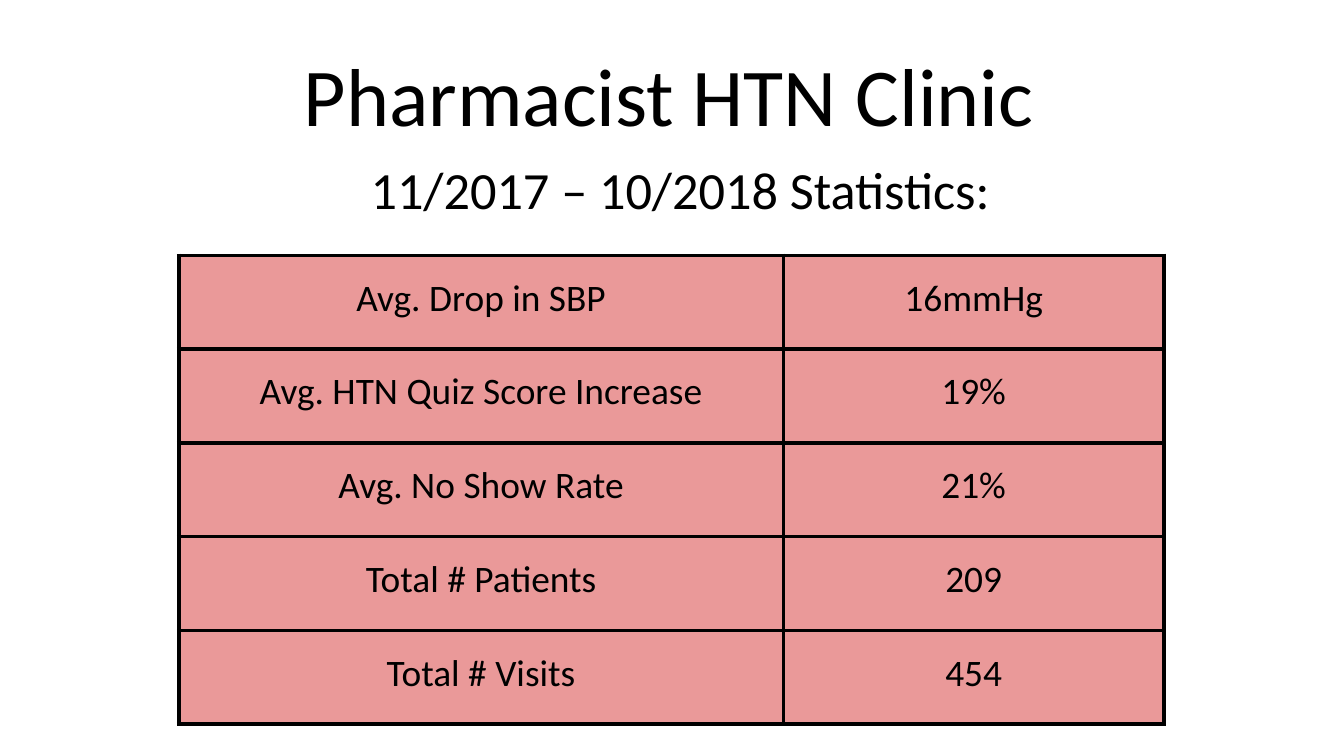
from lxml import etree
from pptx import Presentation
from pptx import util as u
from pptx.dml.color import RGBColor
from pptx.enum import text
from pptx.oxml.ns import qn

COLORS = {"ink": "000000", "cell": "EA9999", "paper": "FFFFFF"}
FONT = "Calibri"
STATISTICS = [
    ("Avg. Drop in SBP", "16mmHg"),
    ("Avg. HTN Quiz Score Increase", "19%"),
    ("Avg. No Show Rate", "21%"),
    ("Total # Patients", "209"),
    ("Total # Visits", "454"),
]


def color(name):
    return RGBColor.from_string(COLORS[name])


class ClinicSlide:
    def __init__(self, deck):
        self.slide = deck.slides.add_slide(deck.slide_layouts[1])
        self.slide.background.fill.solid()
        self.slide.background.fill.fore_color.rgb = color("paper")

    def style(self, paragraph, size):
        paragraph.alignment = text.PP_ALIGN.CENTER
        for run in paragraph.runs:
            run.font.name = FONT
            run.font.size = u.Pt(size)
            run.font.color.rgb = color("ink")

    def placeholder(self, index, wording, box, size, anchor):
        holder = self.slide.placeholders[index]
        holder.left, holder.top, holder.width, holder.height = map(u.Inches, box)
        frame = holder.text_frame
        frame.text = wording
        frame.word_wrap = True
        frame.auto_size = text.MSO_AUTO_SIZE.NONE
        frame.vertical_anchor = anchor
        line = frame.paragraphs[0]
        line.space_before = u.Pt(0)
        self.style(line, size)
        return line

    def title(self, wording):
        self.placeholder(0, wording, (0.33, 0.23, 9.3, 0.94), 44, text.MSO_ANCHOR.MIDDLE)

    def subtitle(self, wording):
        line = self.placeholder(1, wording, (0.5, 1.12, 9, 3.71), 28, text.MSO_ANCHOR.TOP)
        properties = line._p.get_or_add_pPr()
        properties.set("marL", str(u.Inches(0.12)))
        properties.set("indent", "0")
        etree.SubElement(properties, qn("a:buNone"))

    def borders(self, cell):
        properties = cell._tc.get_or_add_tcPr()
        for position, side in enumerate(("lnL", "lnR", "lnT", "lnB")):
            border = etree.Element(qn(f"a:{side}"), w=str(u.Pt(2.25)))
            fill = etree.SubElement(border, qn("a:solidFill"))
            etree.SubElement(fill, qn("a:srgbClr"), val=COLORS["ink"])
            properties.insert(position, border)

    def table(self, rows, left, top, widths, height):
        table = self.slide.shapes.add_table(
            len(rows), len(widths), u.Inches(left), u.Inches(top),
            u.Inches(sum(widths)), u.Inches(height)).table
        table.first_row = table.horz_banding = False
        for column, width in zip(table.columns, widths):
            column.width = u.Inches(width)
        for r, row in enumerate(rows):
            for c, wording in enumerate(row):
                cell = table.cell(r, c)
                cell.text = wording
                cell.margin_left = cell.margin_right = u.Inches(0.1)
                cell.margin_top = cell.margin_bottom = u.Inches(0.1)
                cell.fill.solid()
                cell.fill.fore_color.rgb = color("cell")
                self.borders(cell)
                line = cell.text_frame.paragraphs[0]
                line.line_spacing = 1.15
                self.style(line, 20)


def main():
    deck = Presentation()
    deck.slide_width = u.Inches(10)
    deck.slide_height = deck.slide_width * 9 // 16
    clinic = ClinicSlide(deck)
    clinic.title("Pharmacist HTN Clinic")
    clinic.subtitle("11/2017 – 10/2018 Statistics:")
    clinic.table(STATISTICS, 1.33, 1.9, (4.5, 2.83), 3.49)
    deck.save("out.pptx")


if __name__ == "__main__":
    main()
